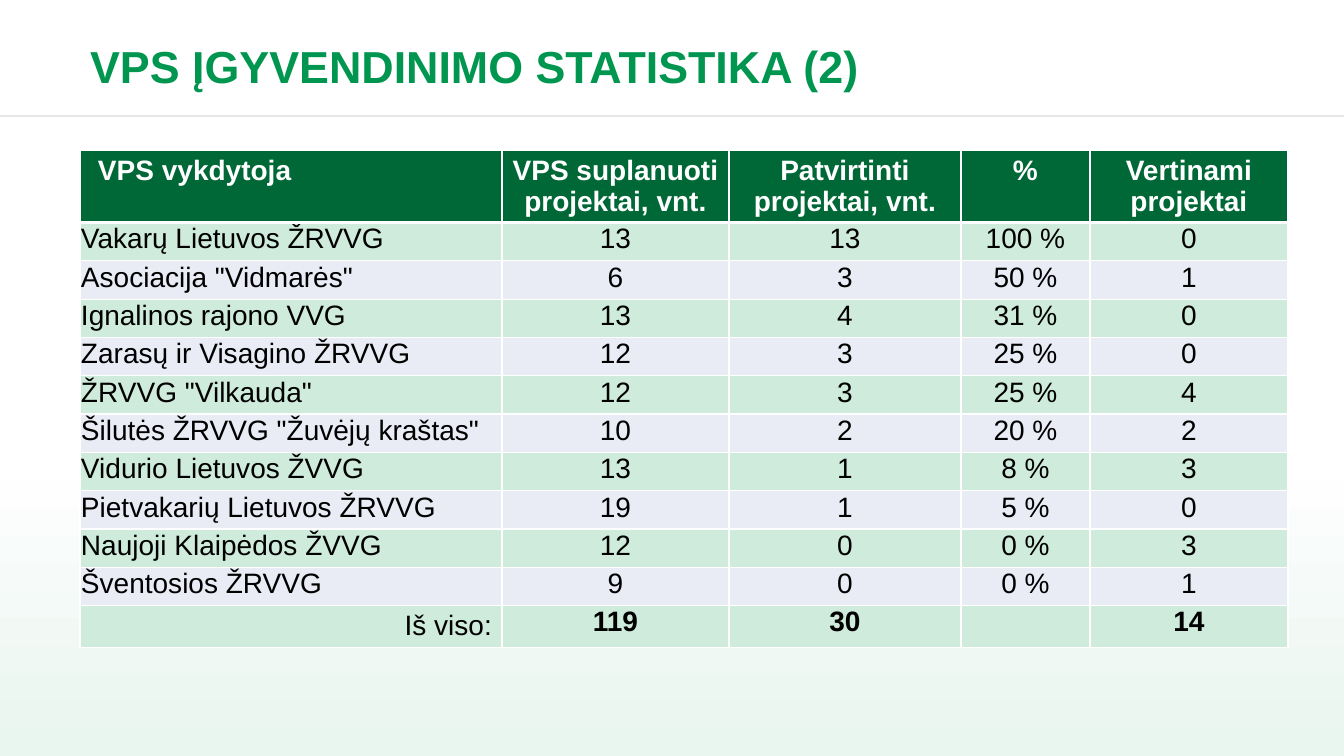
from dataclasses import dataclass

from lxml import etree
from pptx import Presentation
from pptx.dml.color import RGBColor
from pptx.enum import shapes, text
from pptx.oxml import ns
from pptx.util import Pt

SCALE = 12192000 / 1344
WIDE, HIGH = 1344, 756


@dataclass(frozen=True)
class Theme:
    """Colours, font and type sizes of the slide."""
    font: str = "Arial"
    title: int = 32
    body: int = 20
    green: str = "009650"
    head: str = "006837"
    mint: str = "CEEBDB"
    lilac: str = "E9EBF5"
    fade: str = "E9F5EF"
    rule: str = "E6E6E6"
    white: str = "FFFFFF"
    black: str = "000000"


THEME = Theme()
TITLE = "VPS ĮGYVENDINIMO STATISTIKA (2)"
COLS = [422, 227, 232, 129, 198]
HEAD = ["VPS vykdytoja", "VPS suplanuoti projektai, vnt.",
        "Patvirtinti projektai, vnt.", "%", "Vertinami projektai"]
GROUPS = [
    ["Vakarų Lietuvos ŽRVVG", "13", "13", "100 %", "0"],
    ["Asociacija \"Vidmarės\"", "6", "3", "50 %", "1"],
    ["Ignalinos rajono VVG", "13", "4", "31 %", "0"],
    ["Zarasų ir Visagino ŽRVVG", "12", "3", "25 %", "0"],
    ["ŽRVVG \"Vilkauda\"", "12", "3", "25 %", "4"],
    ["Šilutės ŽRVVG \"Žuvėjų kraštas\"", "10", "2", "20 %", "2"],
    ["Vidurio Lietuvos ŽVVG", "13", "1", "8 %", "3"],
    ["Pietvakarių Lietuvos ŽRVVG", "19", "1", "5 %", "0"],
    ["Naujoji Klaipėdos ŽVVG", "12", "0", "0 %", "3"],
    ["Šventosios ŽRVVG", "9", "0", "0 %", "1"],
]
TOTAL = ["Iš viso:", "119", "30", "", "14"]


def px(n):
    """Turn pixels into EMU."""
    return round(n * SCALE)


def rgb(code):
    """Turn a hex code into a colour."""
    return RGBColor.from_string(code)


def style(para, size, color, bold, align):
    """Format a paragraph and its runs."""
    para.alignment = align
    for run in para.runs:
        font = run.font
        font.name, font.size, font.bold = THEME.font, Pt(size), bold
        font.color.rgb = rgb(color)


def backdrop(slide):
    """Draw the fading panel behind everything."""
    box = slide.shapes.add_shape(
        shapes.MSO_SHAPE.RECTANGLE, 0, 0, px(WIDE), px(HIGH))
    box.shadow.inherit = False
    box.line.fill.background()
    box.fill.gradient()
    box.fill.gradient_angle = 90
    stops = zip(box.fill.gradient_stops, (0, 0.4), (THEME.fade, THEME.white))
    for stop, place, color in stops:
        stop.position = place
        stop.color.rgb = rgb(color)
    return box


def rule(slide, y):
    """Draw the line under the title."""
    line = slide.shapes.add_connector(
        shapes.MSO_CONNECTOR.STRAIGHT, 0, px(y), px(WIDE), px(y))
    line.line.color.rgb = rgb(THEME.rule)
    line.line.width = Pt(1)
    etree.SubElement(line.element.spPr, ns.qn("a:effectLst"))
    return line


def heading(slide):
    """Fill and place the title."""
    box = slide.shapes.title
    box.left, box.top, box.width, box.height = map(px, (80, 24, 1077, 93))
    box.text_frame.text = TITLE
    box.text_frame.vertical_anchor = text.MSO_ANCHOR.MIDDLE
    para = box.text_frame.paragraphs[0]
    para.line_spacing = 0.8
    style(para, THEME.title, THEME.green, True, text.PP_ALIGN.LEFT)


def edge(cell, side, width):
    """Add one white border to a cell."""
    props = cell._tc.get_or_add_tcPr()
    line = etree.SubElement(props, ns.qn("a:ln" + side), w=str(Pt(width)))
    fill = etree.SubElement(line, ns.qn("a:solidFill"))
    etree.SubElement(fill, ns.qn("a:srgbClr"), val=THEME.white)


def paint(cell, row, col):
    """Style a cell by its place in the table."""
    head, total = row == 0, row == len(GROUPS) + 1
    for side in "LRTB":
        thick = (row, side) in ((0, "B"), (1, "T"))
        edge(cell, side, 3 if thick else 1)
    band = THEME.mint if row % 2 else THEME.lilac
    cell.fill.solid()
    cell.fill.fore_color.rgb = rgb(THEME.head if head else band)
    if head and col == 0:
        cell.margin_left = px(18)
    elif not head and not (total and col == 0):
        cell.margin_left = cell.margin_right = cell.margin_top = px(1)
        cell.margin_bottom = 0
    align = text.PP_ALIGN.CENTER
    if col == 0:
        align = text.PP_ALIGN.RIGHT if total else text.PP_ALIGN.LEFT
    style(cell.text_frame.paragraphs[0], THEME.body,
          THEME.white if head else THEME.black,
          head or (total and col > 0), align)


def grid(slide):
    """Build the table of groups and projects."""
    rows = [HEAD, *GROUPS, TOTAL]
    highs = [71] + [38.3] * len(GROUPS) + [42]
    table = slide.shapes.add_table(
        len(rows), len(COLS), px(80), px(150),
        px(sum(COLS)), px(sum(highs))).table
    for col, wide in zip(table.columns, COLS):
        col.width = px(wide)
    for r, (row, high) in enumerate(zip(rows, highs)):
        table.rows[r].height = px(high)
        for c, value in enumerate(row):
            cell = table.cell(r, c)
            cell.text_frame.text = value
            paint(cell, r, c)


def main():
    """Build and save the slide."""
    deck = Presentation()
    deck.slide_width, deck.slide_height = px(WIDE), px(HIGH)
    slide = deck.slides.add_slide(deck.slide_layouts[5])
    back = [backdrop(slide), rule(slide, 116)]
    for place, shape in enumerate(back, 2):
        slide.shapes._spTree.insert(place, shape.element)
    heading(slide)
    grid(slide)
    deck.save("out.pptx")


if __name__ == "__main__":
    main()
